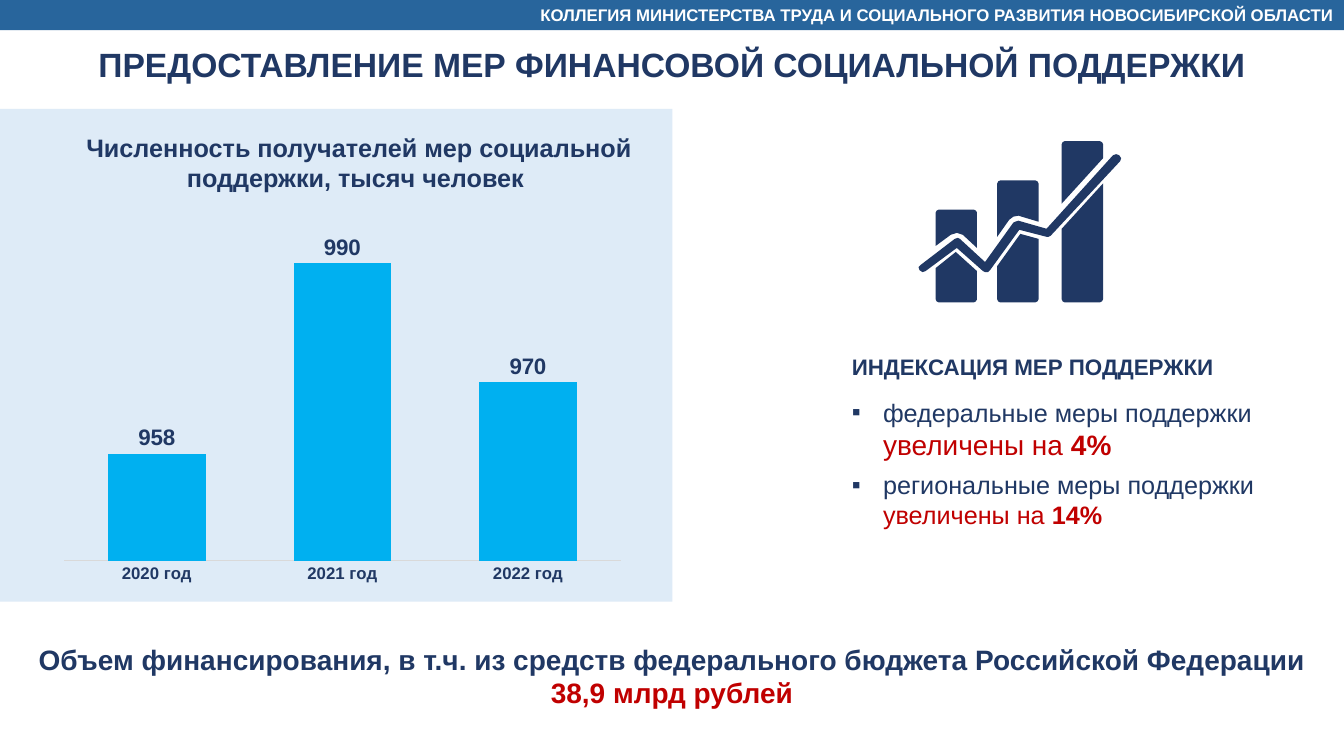
from dataclasses import dataclass
from typing import Any

from lxml.etree import SubElement
from pptx import Presentation
from pptx.chart.data import CategoryChartData
from pptx.dml.color import RGBColor
from pptx.enum.chart import XL_CHART_TYPE, XL_LABEL_POSITION, XL_TICK_MARK
from pptx.enum.text import MSO_ANCHOR, MSO_AUTO_SIZE, PP_ALIGN
from pptx.enum.shapes import MSO_SHAPE
from pptx.oxml import parse_xml
from pptx.oxml.ns import nsdecls, qn
from pptx.util import Inches, Pt

COLORS = {
    "navy": "203864",
    "red": "C00000",
    "white": "FFFFFF",
    "header": "28659C",
    "panel": "DEEBF7",
    "column": "00B0F0",
    "axis": "D9D9D9",
}
SLIDE_WIDTH, SLIDE_HEIGHT = 13.33, 7.5
CORNER = 0.03

Point = tuple[float, float]
Box = tuple[float, float, float, float]


@dataclass
class Run:
    text: str
    size: float
    color: str = "navy"
    bold: bool = True


@dataclass
class TextBlock:
    box: Box
    paragraphs: list[list[Run]]
    align: PP_ALIGN = PP_ALIGN.CENTER
    bulleted: bool = False


@dataclass
class IconBar:
    left: float
    top: float
    upper_cut: list[Point]
    lower_cut: list[Point]
    width: float = 0.41
    bottom: float = 3.0


TEXT_BLOCKS = [
    TextBlock((0, 0.39, SLIDE_WIDTH, 0.5),
              [[Run("ПРЕДОСТАВЛЕНИЕ МЕР ФИНАНСОВОЙ СОЦИАЛЬНОЙ ПОДДЕРЖКИ", 24)]]),
    TextBlock((0.65, 1.26, 5.82, 0.71),
              [[Run("Численность получателей мер социальной поддержки, тысяч человек ", 18)]]),
    TextBlock((0, 6.32, SLIDE_WIDTH, 0.77),
              [[Run("Объем финансирования, в т.ч. из средств федерального бюджета "
                    "Российской Федерации ", 20),
                Run("38,9 млрд рублей", 20, "red")]]),
    TextBlock((8.35, 3.45, 4.36, 0.37),
              [[Run("ИНДЕКСАЦИЯ МЕР ПОДДЕРЖКИ", 16)]], PP_ALIGN.LEFT),
    TextBlock((8.35, 3.89, 4.46, 1.43),
              [[Run("федеральные меры поддержки ", 18, bold=False),
                Run("увеличены на ", 20, "red", False),
                Run("4%", 20, "red")],
               [Run("региональные меры поддержки ", 18, bold=False),
                Run("увеличены на ", 18, "red", False),
                Run("14%", 18, "red")]], PP_ALIGN.LEFT, True),
]

ICON_BARS = [
    IconBar(9.28, 2.08,
            [(9.28, 2.44), (9.43, 2.33), (9.49, 2.31), (9.55, 2.33), (9.69, 2.46)],
            [(9.28, 2.66), (9.48, 2.5), (9.69, 2.69)]),
    IconBar(9.89, 1.79,
            [(9.89, 2.35), (10.01, 2.18), (10.05, 2.15), (10.1, 2.14), (10.3, 2.2)],
            [(9.89, 2.64), (10.12, 2.32), (10.3, 2.37)]),
    IconBar(10.53, 1.4,
            [(10.53, 2.02), (10.94, 1.57)],
            [(10.53, 2.27), (10.94, 1.82)]),
]
TREND_LINE = [
    (11.07, 1.53), (11.1, 1.54), (11.12, 1.57), (11.11, 1.6), (10.42, 2.34),
    (10.4, 2.35), (10.38, 2.35), (10.11, 2.28), (9.82, 2.68), (9.8, 2.7),
    (9.77, 2.7), (9.75, 2.69), (9.49, 2.46), (9.18, 2.69), (9.15, 2.7),
    (9.12, 2.68), (9.11, 2.65), (9.13, 2.63), (9.47, 2.37), (9.5, 2.36),
    (9.52, 2.37), (9.77, 2.6), (10.05, 2.21), (10.07, 2.2), (10.1, 2.19),
    (10.38, 2.27), (11.04, 1.54),
]


def rgb(color: str) -> RGBColor:
    return RGBColor.from_string(COLORS[color])


def style_font(font: Any, size: float, color: str = "navy", bold: bool = True) -> None:
    for name, value in {"name": "Arial", "size": Pt(size), "bold": bold}.items():
        setattr(font, name, value)
    font.color.rgb = rgb(color)


def paint(shape: Any, color: str) -> None:
    shape.shadow.inherit = False
    shape.fill.solid()
    shape.fill.fore_color.rgb = rgb(color)
    shape.line.fill.background()


def add_rectangle(slide: Any, box: Box, color: str) -> Any:
    shape = slide.shapes.add_shape(MSO_SHAPE.RECTANGLE, *map(Inches, box))
    paint(shape, color)
    return shape


def add_runs(paragraph: Any, runs: list[Run]) -> None:
    for item in runs:
        run = paragraph.add_run()
        run.text = item.text
        style_font(run.font, item.size, item.color, item.bold)


def add_bullet(paragraph: Any) -> None:
    properties = paragraph._p.get_or_add_pPr()
    indent = Inches(0.31)
    properties.set("marL", str(indent))
    properties.set("indent", str(-indent))
    SubElement(properties, qn("a:buFont")).set("typeface", "Arial")
    SubElement(properties, qn("a:buChar")).set("char", "▪")
    paragraph.space_after = Pt(6)


def add_text(slide: Any, block: TextBlock) -> None:
    frame = slide.shapes.add_textbox(*map(Inches, block.box)).text_frame
    frame.word_wrap = True
    frame.auto_size = MSO_AUTO_SIZE.SHAPE_TO_FIT_TEXT
    for index, runs in enumerate(block.paragraphs):
        paragraph = frame.add_paragraph() if index else frame.paragraphs[0]
        if block.bulleted:
            add_bullet(paragraph)
        paragraph.alignment = block.align
        add_runs(paragraph, runs)


def add_recipient_chart(slide: Any) -> None:
    data = CategoryChartData()
    data.categories = ["2020 год", "2021 год", "2022 год"]
    data.add_series("Численность", [958, 990, 970])
    chart = slide.shapes.add_chart(
        XL_CHART_TYPE.COLUMN_CLUSTERED, *map(Inches, (0.63, 1.87, 5.83, 4.07)), data).chart
    chart.has_title = chart.has_legend = False
    style_font(chart.font, 10, bold=False)

    values = chart.value_axis
    for name, value in {"minimum_scale": 940, "maximum_scale": 1000,
                        "has_major_gridlines": False, "visible": False}.items():
        setattr(values, name, value)
    categories = chart.category_axis
    categories.major_tick_mark = XL_TICK_MARK.NONE
    categories.format.line.color.rgb = rgb("axis")
    categories.format.line.width = Pt(0.75)
    style_font(categories.tick_labels.font, 12)

    plot = chart.plots[0]
    for name, value in {"gap_width": 90, "overlap": -1, "vary_by_categories": False,
                        "has_data_labels": True}.items():
        setattr(plot, name, value)
    plot.data_labels.show_value = True
    plot.data_labels.position = XL_LABEL_POSITION.OUTSIDE_END
    style_font(plot.data_labels.font, 16)
    fill = plot.series[0].format.fill
    fill.solid()
    fill.fore_color.rgb = rgb("column")

    area = chart._chartSpace.chart.plotArea
    for layout in area.findall(qn("c:layout")):
        area.remove(layout)
    area.insert(0, parse_xml(
        f'<c:layout {nsdecls("c")}><c:manualLayout><c:layoutTarget val="inner"/>'
        '<c:xMode val="edge"/><c:yMode val="edge"/><c:x val="0"/><c:y val="0.038"/>'
        '<c:w val="0.948"/><c:h val="0.869"/></c:manualLayout></c:layout>'))


def add_outline(group: Any, points: list[Point]) -> None:
    start, *rest = [(Inches(x), Inches(y)) for x, y in points]
    builder = group.shapes.build_freeform(*start)
    builder.add_line_segments(rest, close=True)
    paint(builder.convert_to_shape(), "navy")


def bar_end(bar: IconBar, edge: float, inward: float) -> list[Point]:
    right = bar.left + bar.width
    return [(right, edge + inward), (right - CORNER / 3, edge + inward / 3),
            (right - CORNER, edge), (bar.left + CORNER, edge),
            (bar.left + CORNER / 3, edge + inward / 3), (bar.left, edge + inward)]


def add_growth_icon(slide: Any) -> None:
    group = slide.shapes.add_group_shape()
    for bar in ICON_BARS:
        add_outline(group, bar.upper_cut + bar_end(bar, bar.top, CORNER))
        add_outline(group, bar.lower_cut + bar_end(bar, bar.bottom, -CORNER))
    add_outline(group, TREND_LINE)


def main() -> None:
    presentation = Presentation()
    presentation.slide_width = Inches(SLIDE_WIDTH)
    presentation.slide_height = Inches(SLIDE_HEIGHT)
    slide = presentation.slides.add_slide(presentation.slide_layouts[6])
    add_rectangle(slide, (0, 1.08, 6.67, 4.89), "panel")
    header = add_rectangle(slide, (0, 0, SLIDE_WIDTH, 0.3), "header").text_frame
    header.word_wrap = True
    header.vertical_anchor = MSO_ANCHOR.MIDDLE
    header.paragraphs[0].alignment = PP_ALIGN.RIGHT
    add_runs(header.paragraphs[0], [Run(
        "КОЛЛЕГИЯ МИНИСТЕРСТВА ТРУДА И СОЦИАЛЬНОГО РАЗВИТИЯ НОВОСИБИРСКОЙ ОБЛАСТИ",
        12, "white")])
    for block in TEXT_BLOCKS:
        add_text(slide, block)
    add_recipient_chart(slide)
    add_growth_icon(slide)
    presentation.save("out.pptx")


if __name__ == "__main__":
    main()
